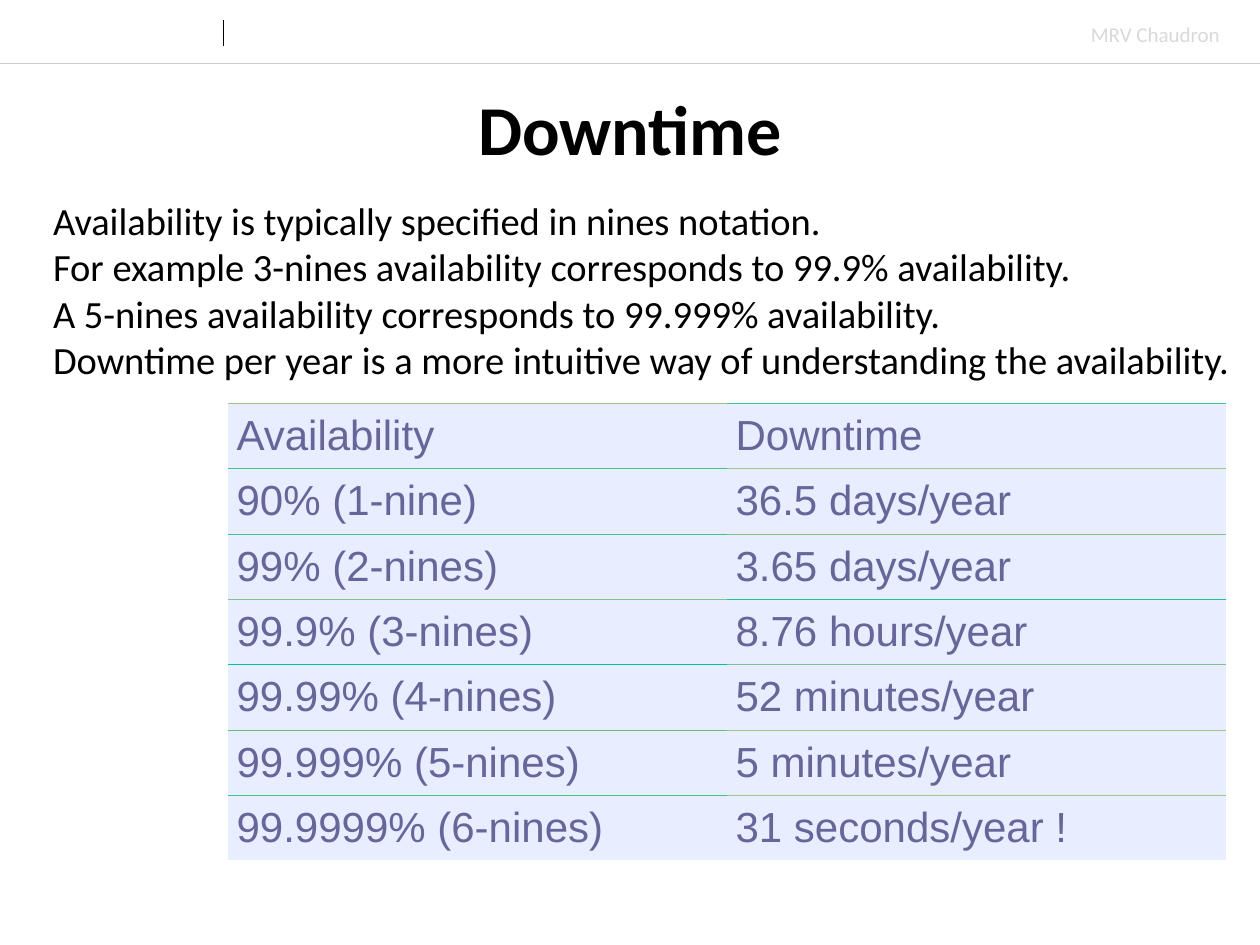
from dataclasses import dataclass

from lxml import etree
from pptx import Presentation
from pptx.dml.color import RGBColor
from pptx.enum import shapes, text
from pptx.oxml import ns
from pptx.util import Cm, Pt


@dataclass(frozen=True)
class Theme:
    ink: str = "000000"
    pale: str = "D9D9D9"
    rule: str = "CCCCCC"
    paper: str = "FFFFFF"
    cell: str = "E8EDFF"
    slate: str = "666699"
    font: str = "Calibri"
    grid: str = "Arial"
    title: int = 40
    table: int = 24
    body: int = 22
    small: int = 12


THEME = Theme()

FACTS = [
    "Availability is typically specified in nines notation.",
    "For example 3-nines availability corresponds to 99.9% availability.",
    "A 5-nines availability corresponds to 99.999% availability.",
    "Downtime per year is a more intuitive way of understanding the availability.",
]
ROWS = [
    ("Availability", "Downtime"),
    ("90% (1-nine)", "36.5 days/year"),
    ("99% (2-nines)", "3.65 days/year"),
    ("99.9% (3-nines)", "8.76 hours/year"),
    ("99.99% (4-nines)", "52 minutes/year"),
    ("99.999% (5-nines)", "5 minutes/year"),
    ("99.9999% (6-nines)", "31 seconds/year !"),
]
# Horizontal rules from top to bottom: (left column, right column)
RULES = [
    ("A0C588", "40C788"),
    ("40C588", "A0C688"),
    ("40C488", "80C488"),
    ("80C488", "20C288"),
    ("00C588", "80C188"),
    ("60C188", "A0C688"),
    ("40C588", "A0C688"),
    ("FFFFFF", "FFFFFF"),
]


def rgb(code):
    return RGBColor.from_string(code)


def write(frame, lines, size, color=THEME.ink, font=THEME.font, bold=False,
          align=text.PP_ALIGN.LEFT):
    """Fill a text frame with one paragraph per line, all in one format."""
    for i, line in enumerate(lines):
        para = frame.paragraphs[0] if i == 0 else frame.add_paragraph()
        para.alignment = align
        run = para.add_run()
        run.text = line
        run.font.size = Pt(size)
        run.font.name = font
        run.font.bold = bold
        run.font.color.rgb = rgb(color)


def add_line(slide, x1, y1, x2, y2, color, width):
    line = slide.shapes.add_connector(
        shapes.MSO_CONNECTOR.STRAIGHT, Cm(x1), Cm(y1), Cm(x2), Cm(y2))
    line.line.color.rgb = rgb(color)
    line.line.width = Pt(width)
    etree.SubElement(line._element.spPr, ns.qn("a:effectLst"))


def add_label(slide, x, y, w, h, words):
    box = slide.shapes.add_textbox(Cm(x), Cm(y), Cm(w), Cm(h))
    box.text_frame.word_wrap = False
    write(box.text_frame, [words], THEME.small, color=THEME.pale)


def set_title(slide, x, y, w, h, words):
    title = slide.shapes.title
    title.left, title.top, title.width, title.height = Cm(x), Cm(y), Cm(w), Cm(h)
    title.text_frame.vertical_anchor = text.MSO_ANCHOR.MIDDLE
    write(title.text_frame, [words], THEME.title, bold=True,
          align=text.PP_ALIGN.CENTER)


def add_panel(slide, x, y, w, h, lines):
    panel = slide.shapes.add_shape(
        shapes.MSO_SHAPE.RECTANGLE, Cm(x), Cm(y), Cm(w), Cm(h))
    panel.shadow.inherit = False
    panel.fill.solid()
    panel.fill.fore_color.rgb = rgb(THEME.paper)
    panel.line.fill.background()
    frame = panel.text_frame
    frame.word_wrap = True
    frame.vertical_anchor = text.MSO_ANCHOR.MIDDLE
    frame.margin_left, frame.margin_top = Cm(0.18), Cm(0.23)
    frame.margin_right = frame.margin_bottom = 0
    write(frame, lines, THEME.body)


def set_border(cell, side, color=None):
    """Draw one side of a cell, or clear it when no colour is given."""
    line = etree.SubElement(cell._tc.get_or_add_tcPr(), ns.qn(f"a:ln{side}"))
    if color is None:
        etree.SubElement(line, ns.qn("a:noFill"))
        return
    line.set("w", str(Pt(0.6)))
    fill = etree.SubElement(line, ns.qn("a:solidFill"))
    etree.SubElement(fill, ns.qn("a:srgbClr"), val=color)


def add_grid(slide, x, y, w, row, rows, rules):
    count = len(rows)
    table = slide.shapes.add_table(
        count, len(rows[0]), Cm(x), Cm(y), Cm(w), Cm(row * count)).table
    table.first_row = table.horz_banding = False
    for r, words in enumerate(rows):
        table.rows[r].height = Cm(row)
        for c, word in enumerate(words):
            cell = table.cell(r, c)
            set_border(cell, "L")
            set_border(cell, "R")
            set_border(cell, "T", rules[r][c])
            set_border(cell, "B", rules[r + 1][c])
            cell.fill.solid()
            cell.fill.fore_color.rgb = rgb(THEME.cell)
            cell.vertical_anchor = text.MSO_ANCHOR.MIDDLE
            cell.margin_left = cell.margin_right = Cm(0.17)
            cell.margin_top = cell.margin_bottom = Cm(0.15)
            write(cell.text_frame, [word], THEME.table, color=THEME.slate,
                  font=THEME.grid)


def main():
    deck = Presentation()
    deck.slide_width, deck.slide_height = Cm(25.4), Cm(19.05)
    slide = deck.slides.add_slide(deck.slide_layouts.get_by_name("Title Only"))
    add_line(slide, 0, 1.27, 25.4, 1.27, THEME.rule, 0.25)
    add_line(slide, 4.5, 0.4, 4.5, 0.92, THEME.ink, 0.5)
    add_label(slide, 21.74, 0.3, 3.12, 0.76, "MRV Chaudron")
    set_title(slide, 0, 1.52, 25.4, 2.11, "Downtime")
    add_grid(slide, 4.6, 8.13, 20.12, 1.28, ROWS, RULES)
    add_panel(slide, 0.89, 3.73, 24, 3.99, FACTS)
    deck.save("out.pptx")


if __name__ == "__main__":
    main()
